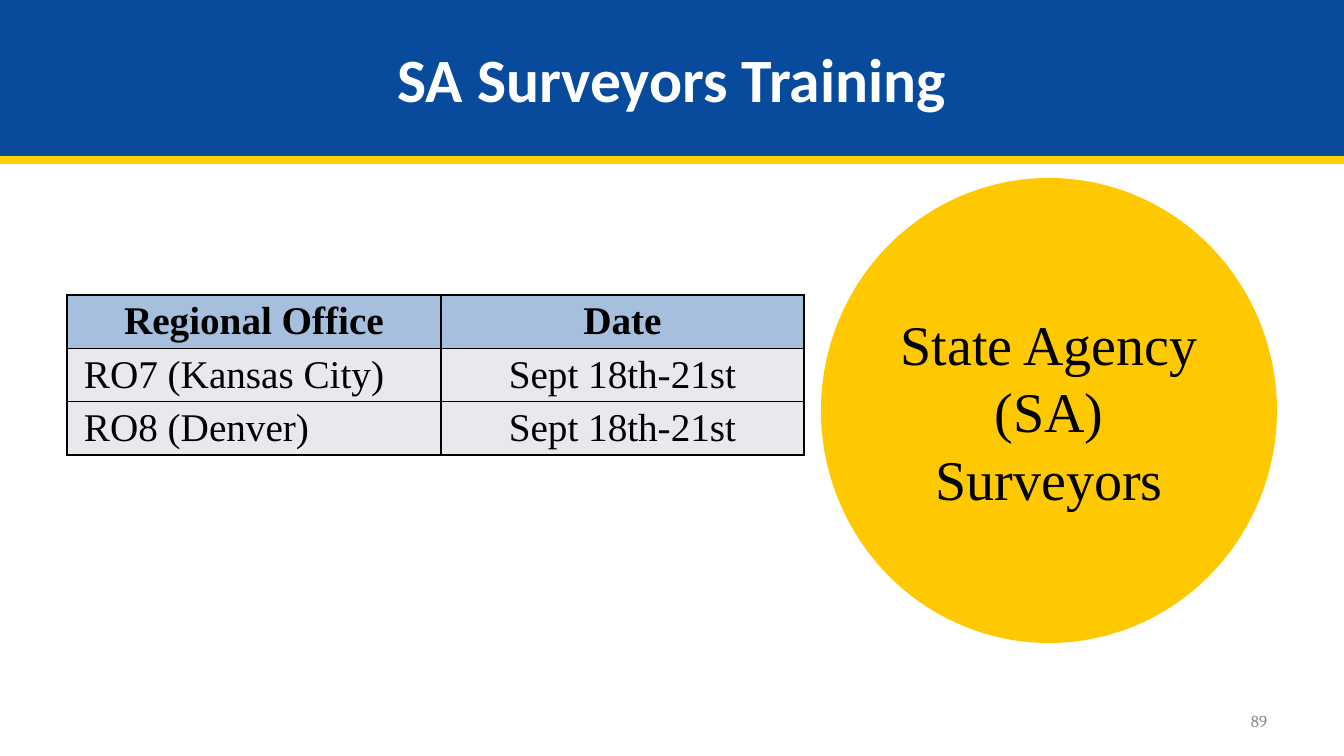
from lxml import etree
from pptx import Presentation
from pptx.dml.color import RGBColor
from pptx.enum.shapes import MSO_SHAPE
from pptx.enum.text import MSO_ANCHOR, PP_ALIGN
from pptx.oxml import parse_xml
from pptx.util import Pt

PX = 914400 / 100.8
LEFT, CENTER, RIGHT = PP_ALIGN.LEFT, PP_ALIGN.CENTER, PP_ALIGN.RIGHT
MIDDLE = MSO_ANCHOR.MIDDLE
RECTANGLE, CIRCLE = MSO_SHAPE.RECTANGLE, MSO_SHAPE.FLOWCHART_CONNECTOR
DRAWING = "http://schemas.openxmlformats.org/drawingml/2006/main"
SERIF = "Times New Roman"
BLACK, YELLOW = "000000", "FFC902"


def px(length):
    return round(length * PX)


def color(value):
    return RGBColor.from_string(value)


def write(frame, text, size, font, ink, align, bold=False):
    frame.text = text
    for para in frame.paragraphs:
        para.alignment = align
        for span in para.runs:
            span.font.size = Pt(size)
            span.font.name = font
            span.font.bold = bold
            span.font.color.rgb = color(ink)


def add_filled(page, kind, box, fill):
    shape = page.shapes.add_shape(kind, *map(px, box))
    shape.shadow.inherit = False
    shape.fill.solid()
    shape.fill.fore_color.rgb = color(fill)
    shape.line.fill.background()
    shape.text_frame.word_wrap = True
    shape.text_frame.vertical_anchor = MIDDLE
    return shape


def add_title(page, box, text):
    left, top, width, height = box
    # Yellow edge showing below the blue banner
    add_filled(page, RECTANGLE, (left, top + height, width, 8), "FFD004")
    banner = add_filled(page, RECTANGLE, box, "084A9C")
    write(banner.text_frame, text, 44, "Calibri", "FFFFFF", CENTER, True)


def add_borders(cell):
    properties = cell._tc.get_or_add_tcPr()
    for side in ("lnL", "lnR", "lnT", "lnB"):
        line = etree.SubElement(properties, f"{{{DRAWING}}}{side}", w=str(Pt(1)))
        line.append(parse_xml(
            f'<a:solidFill xmlns:a="{DRAWING}"><a:srgbClr val="{BLACK}"/></a:solidFill>'))


def add_schedule(page, box, widths, rows):
    frame = page.shapes.add_table(len(rows), len(widths), *map(px, box))
    table = frame.table
    for column, width in zip(table.columns, widths):
        column.width = px(width)
    for r, row in enumerate(rows):
        table.rows[r].height = px(box[3] / len(rows))
        header = r == 0
        for c, text in enumerate(row):
            cell = table.cell(r, c)
            cell.margin_left = cell.margin_right = px(17)
            cell.margin_top = cell.margin_bottom = px(5)
            add_borders(cell)
            cell.fill.solid()
            cell.fill.fore_color.rgb = color("A6BFDD" if header else "E8E9EC")
            align = CENTER if header or c else LEFT
            write(cell.text_frame, text, 28, SERIF, BLACK, align, header)


def add_audience(page, box, text):
    circle = add_filled(page, CIRCLE, box, YELLOW)
    write(circle.text_frame, text, 40, SERIF, BLACK, CENTER)


def add_page_number(page, box, number):
    label = page.shapes.add_textbox(*map(px, box))
    label.text_frame.word_wrap = True
    label.text_frame.vertical_anchor = MIDDLE
    write(label.text_frame, number, 12, "Cambria", "8C8C8C", RIGHT)


def main():
    deck = Presentation()
    deck.slide_width, deck.slide_height = px(1344), px(756)
    page = deck.slides.add_slide(deck.slide_layouts[6])

    add_schedule(page, (67, 295, 737, 159), (374, 363), [
        ("Regional Office", "Date"),
        ("RO7 (Kansas City)", "Sept 18th-21st"),
        ("RO8 (Denver)", "Sept 18th-21st"),
    ])
    add_page_number(page, (964, 701, 313, 40), "89")
    add_audience(page, (821, 178, 456, 465), "State Agency (SA)\vSurveyors")
    add_title(page, (0, 0, 1344, 156), "SA Surveyors Training")

    deck.save("out.pptx")


if __name__ == "__main__":
    main()
